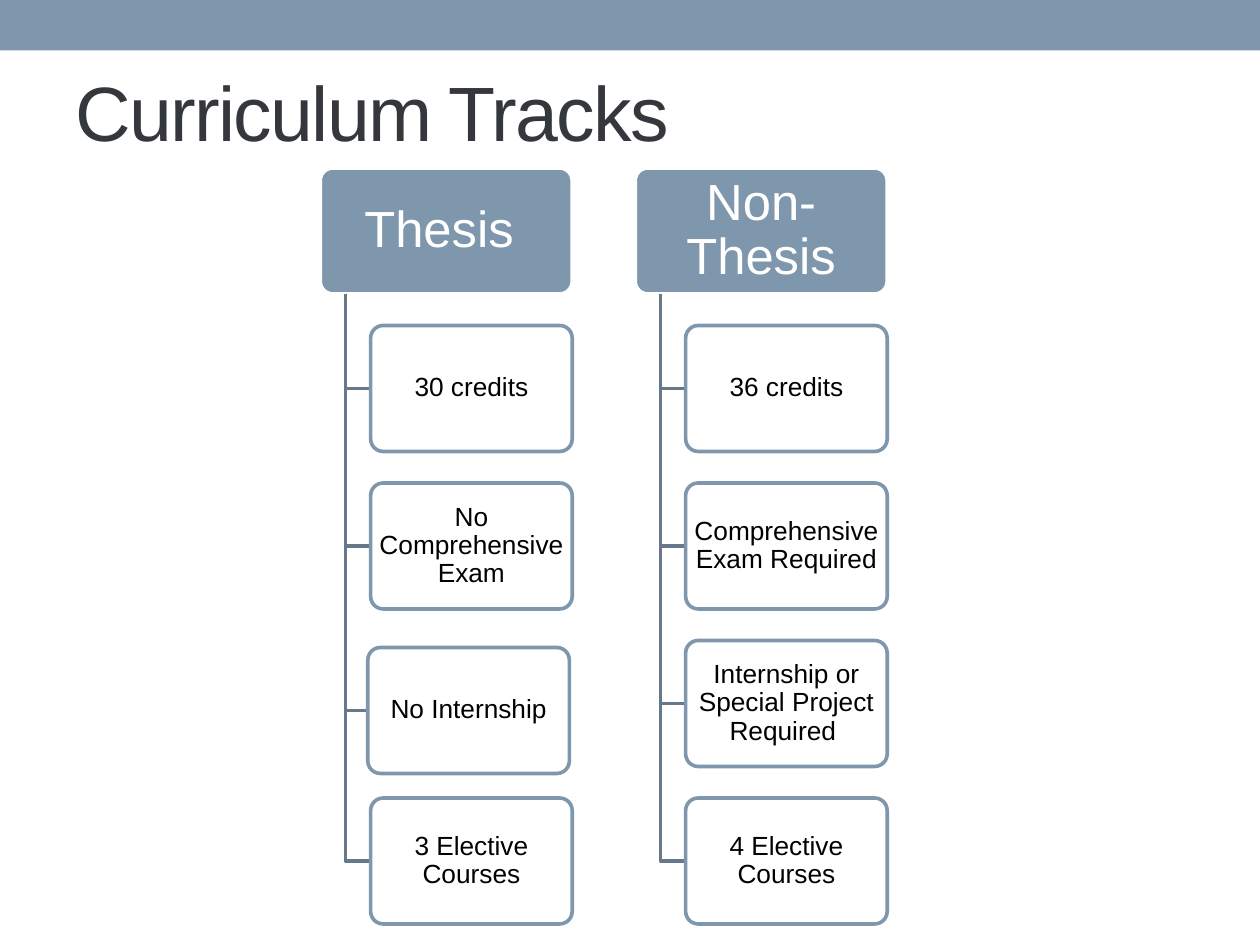
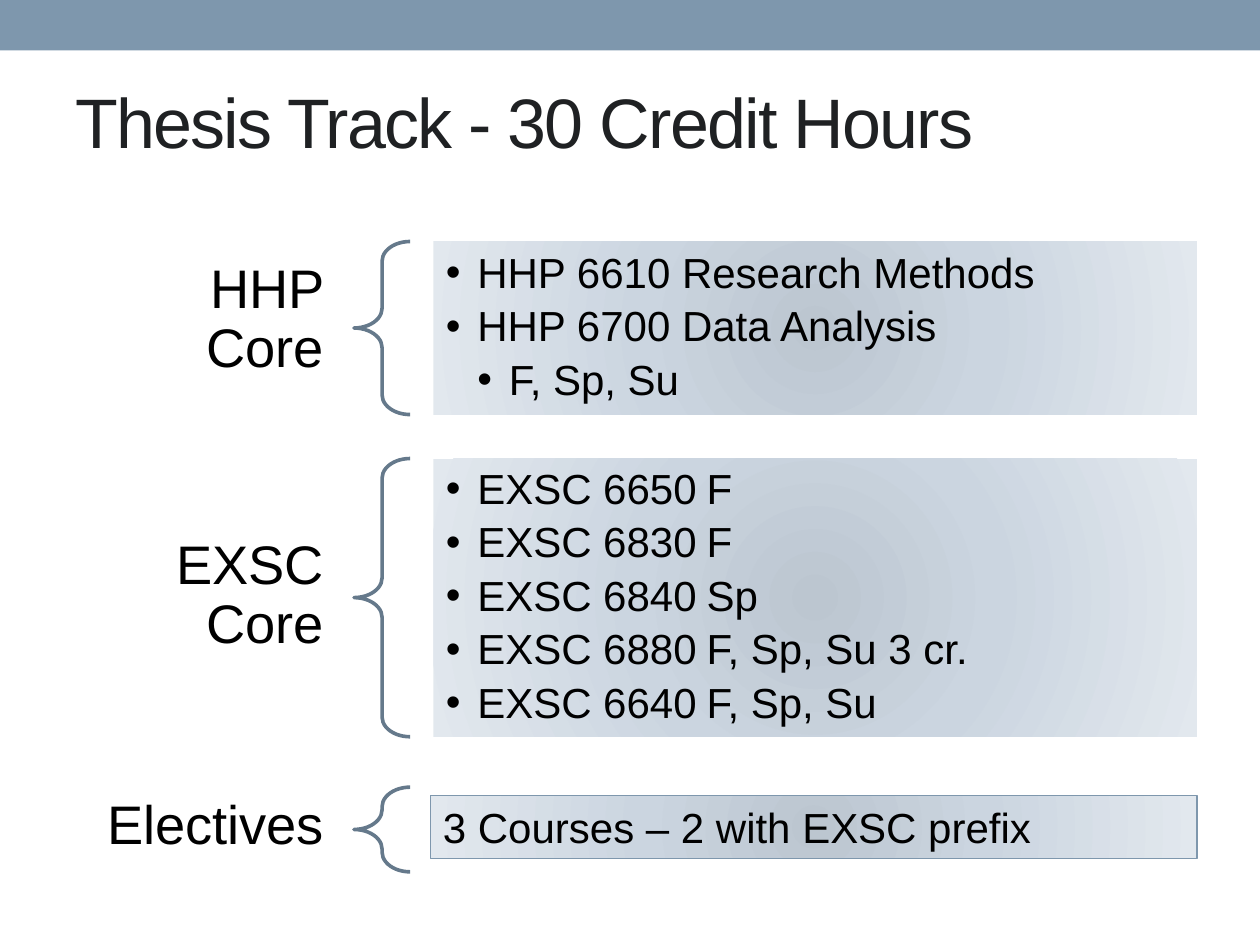
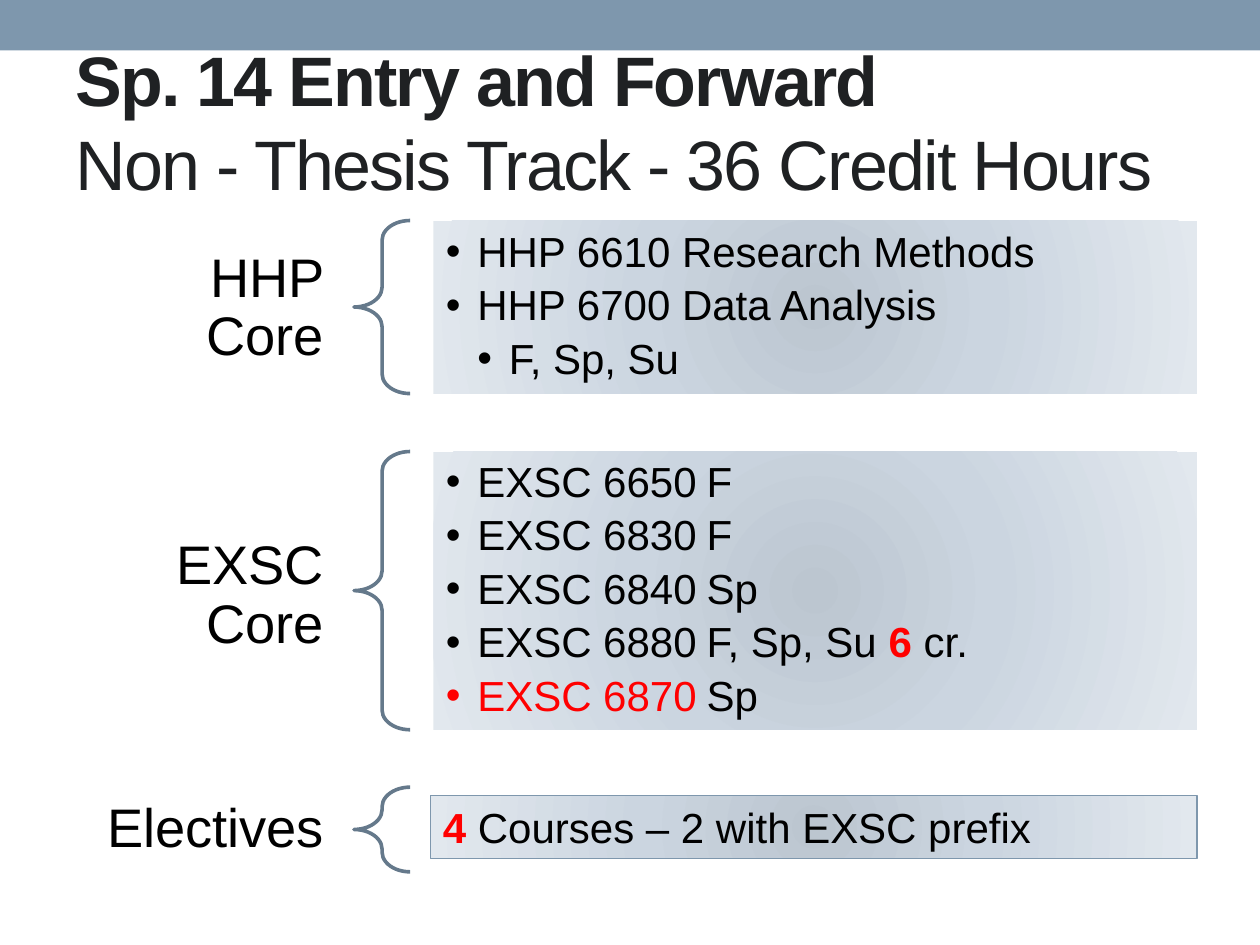
from pptx import Presentation
from pptx.dml.color import RGBColor
from pptx.enum.shapes import MSO_SHAPE as Preset
from pptx.enum.text import MSO_ANCHOR as Anchor, PP_ALIGN as Align
from pptx.oxml import parse_xml
from pptx.oxml.ns import nsdecls, qn
from pptx.util import Pt

FONT = "Arial"
BLUE, DARK_BLUE = "7E97AD", "65798B"
WHITE, BLACK, RED = "FFFFFF", "000000", "FF0000"
TITLE_GRAY, TITLE_BLACK = "34373B", "1F2123"
PANEL_STOPS = [(0, "BCC6D0"), (45, "CBD5E0"), (100, "E2E8EE")]
LINE_WIDTH = 2.08
HANGING = 18
TERM_TAB = 149

HHP_COURSES = [(1, ["HHP 6610 Research Methods"]), (1, ["HHP 6700 Data Analysis"]), (2, ["F, Sp, Su"])]
SHARED_EXSC = [(1, ["EXSC 6650\tF"]), (1, ["EXSC 6830\tF"]), (1, ["EXSC 6840\tSp"])]


def color(value):
    return RGBColor.from_string(value)


def add_span(para, text, size, ink=BLACK, bold=False):
    span = para.add_run()
    span.text = text
    span.font.name = FONT
    span.font.size = Pt(size)
    span.font.bold = bold
    span.font.color.rgb = color(ink)
    return span


def add_spans(para, spans, size):
    for span in spans:
        if isinstance(span, str):
            span = (span,)
        add_span(para, span[0], size, *span[1:])


def set_frame(box, margin_x, margin_y, anchor=Anchor.MIDDLE):
    frame = box.text_frame
    frame.word_wrap = True
    frame.vertical_anchor = anchor
    frame.margin_left = frame.margin_right = Pt(margin_x)
    frame.margin_top = frame.margin_bottom = Pt(margin_y)
    return frame


def set_line(box, ink, width=LINE_WIDTH):
    box.line.color.rgb = color(ink)
    box.line.width = Pt(width)


def add_preset(page, preset, left, top, width, height, fill=None):
    box = page.shapes.add_shape(preset, Pt(left), Pt(top), Pt(width), Pt(height))
    box.shadow.inherit = False
    box.line.fill.background()
    if fill:
        box.fill.solid()
        box.fill.fore_color.rgb = color(fill)
    else:
        box.fill.background()
    return box


def add_page(deck, top, height, size, ink, lines):
    page = deck.slides.add_slide(deck.slide_layouts[6])
    add_preset(page, Preset.RECTANGLE, 0, 0, 720, 28.8, BLUE)
    box = page.shapes.add_textbox(Pt(36), Pt(top), Pt(648), Pt(height))
    para = set_frame(box, 7.2, 3.6).paragraphs[0]
    for index, (text, bold) in enumerate(lines):
        if index:
            para.add_line_break()
        span = add_span(para, text, size, ink, bold)
        span.font._element.set("spc", "-100")
    return page


def add_node(page, left, top, width, text, size, ink, fill, outline, margins):
    box = add_preset(page, Preset.ROUNDED_RECTANGLE, left, top, width, 72, fill)
    box.adjustments[0] = 0.1
    set_line(box, outline)
    para = set_frame(box, *margins).paragraphs[0]
    para.alignment = Align.CENTER
    para.line_spacing = 0.9
    add_span(para, text, size, ink)
    return box


def add_elbow(page, trunk, top, left, middle):
    builder = page.shapes.build_freeform(Pt(trunk), Pt(top))
    builder.add_line_segments([(Pt(trunk), Pt(middle)), (Pt(left), Pt(middle))], close=False)
    elbow = builder.convert_to_shape()
    elbow.shadow.inherit = False
    elbow.fill.background()
    set_line(elbow, DARK_BLUE)


def add_track(page, left, heading, details):
    add_node(page, left, 96, 144, heading, 29, WHITE, BLUE, WHITE, (4.1, 2.8))
    for row, (text, shift_x, shift_y) in enumerate(details):
        node_left = left + 28.8 + shift_x
        node_top = 186 + 90 * row + shift_y
        add_elbow(page, left + 14.4, 168, node_left, node_top + 36)
        node = add_node(page, node_left, node_top, 115.2, text, 15, BLACK, WHITE, BLUE, (2.1, 1.4))
        tint = node.fill._xPr.find(qn("a:solidFill"))[0]
        tint.append(parse_xml(f'<a:alpha {nsdecls("a")} val="90000"/>'))


def add_panel(page, left, top, width, height):
    box = add_preset(page, Preset.RECTANGLE, left, top, width, height)
    stops = "".join(
        f'<a:gs pos="{place * 1000}"><a:srgbClr val="{ink}"/></a:gs>' for place, ink in PANEL_STOPS
    )
    gradient = parse_xml(
        f'<a:gradFill {nsdecls("a")} rotWithShape="1"><a:gsLst>{stops}</a:gsLst><a:path path="circle">'
        '<a:fillToRect l="100000" t="100000" r="100000" b="100000"/></a:path></a:gradFill>'
    )
    properties = box._element.spPr
    properties.replace(properties.find(qn("a:noFill")), gradient)
    return box


def set_bullet(para, level):
    properties = para._p.get_or_add_pPr()
    properties.set("marL", str(Pt(HANGING * level)))
    properties.set("indent", str(-Pt(HANGING)))
    properties.set("defTabSz", str(Pt(TERM_TAB)))
    properties.append(parse_xml(f'<a:buFont {nsdecls("a")} typeface="{FONT}"/>'))
    properties.append(parse_xml(f'<a:buChar {nsdecls("a")} char="•"/>'))
    properties.append(
        parse_xml(f'<a:tabLst {nsdecls("a")}><a:tab pos="{Pt(TERM_TAB)}" algn="l"/></a:tabLst>')
    )


def add_courses(page, top, height, courses):
    frame = set_frame(add_panel(page, 247.7, top, 436.3, height), 7.2, 7.2)
    for index, (level, spans) in enumerate(courses):
        para = frame.add_paragraph() if index else frame.paragraphs[0]
        para.alignment = Align.LEFT
        para.level = level
        para.line_spacing = 0.9
        para.space_after = Pt(4.7)
        set_bullet(para, level)
        add_spans(para, spans, 24)


def add_label(page, text, top, height):
    box = page.shapes.add_textbox(Pt(41.8), Pt(top), Pt(160.6), Pt(height))
    para = set_frame(box, 17.3, 6.5).paragraphs[0]
    para.alignment = Align.RIGHT
    para.line_spacing = 0.9
    add_span(para, text, 31)


def add_brace(page, top, height):
    brace = add_preset(page, Preset.LEFT_BRACE, 202.3, top, 32.1, height)
    brace.adjustments[0] = 0.35
    brace.adjustments[1] = 0.5
    set_line(brace, DARK_BLUE)


def add_core(page, name, label_top, top, height, courses):
    add_label(page, name, label_top, 77)
    add_brace(page, top, height)
    add_courses(page, top, height, courses)


def add_electives(page, label_top, spans):
    add_label(page, "Electives", label_top, 48.2)
    add_brace(page, 449.8, 48.4)
    box = add_panel(page, 246, 454.4, 438, 36.3)
    set_line(box, BLUE, 0.75)
    para = set_frame(box, 7.2, 3.6, Anchor.TOP).paragraphs[0]
    para.alignment = Align.LEFT
    add_spans(para, spans, 24)


def main():
    deck = Presentation()
    deck.slide_width = Pt(720)
    deck.slide_height = Pt(540)

    tracks = add_page(deck, 18, 90, 44, TITLE_GRAY, [("Curriculum Tracks", False)])
    add_track(tracks, 183, "Thesis ", [
        ("30 credits", 0, 0),
        ("No Comprehensive Exam", 0, 0),
        ("No Internship", -1.6, 4),
        ("3 Elective Courses", 0, 0),
    ])
    add_track(tracks, 363, "Non-Thesis", [
        ("36 credits", 0, 0),
        ("Comprehensive Exam Required", 0, 0),
        ("Internship or Special Project Required ", 0, 0),
        ("4 Elective Courses", 0, 0),
    ])

    thesis = add_page(deck, 30, 78, 40, TITLE_BLACK, [("Thesis Track - 30 Credit Hours", False)])
    add_core(thesis, "HHP Core", 144.7, 138, 98.9, HHP_COURSES)
    add_core(thesis, "EXSC Core", 302.4, 262, 159, SHARED_EXSC + [
        (1, ["EXSC 6880\tF, Sp, Su 3 cr."]),
        (1, ["EXSC 6640\tF, Sp, Su"]),
    ])
    add_electives(thesis, 448.6, ["3 Courses – 2 with EXSC prefix"])

    non_thesis = add_page(deck, 30, 78, 40, TITLE_BLACK, [
        ("Sp. 14 Entry and Forward", True),
        ("Non - Thesis Track - 36 Credit Hours", False),
    ])
    add_core(non_thesis, "HHP Core", 138, 126, 98.9, HHP_COURSES)
    add_core(non_thesis, "EXSC Core", 302.4, 258, 159, SHARED_EXSC + [
        (1, ["EXSC 6880\tF, Sp, Su ", ("6", RED, True), " cr."]),
        (1, [("EXSC 6870\t", RED), "Sp"]),
    ])
    add_electives(non_thesis, 450, [("4", RED, True), " Courses – 2 with EXSC prefix"])

    deck.save("out.pptx")


if __name__ == "__main__":
    main()
